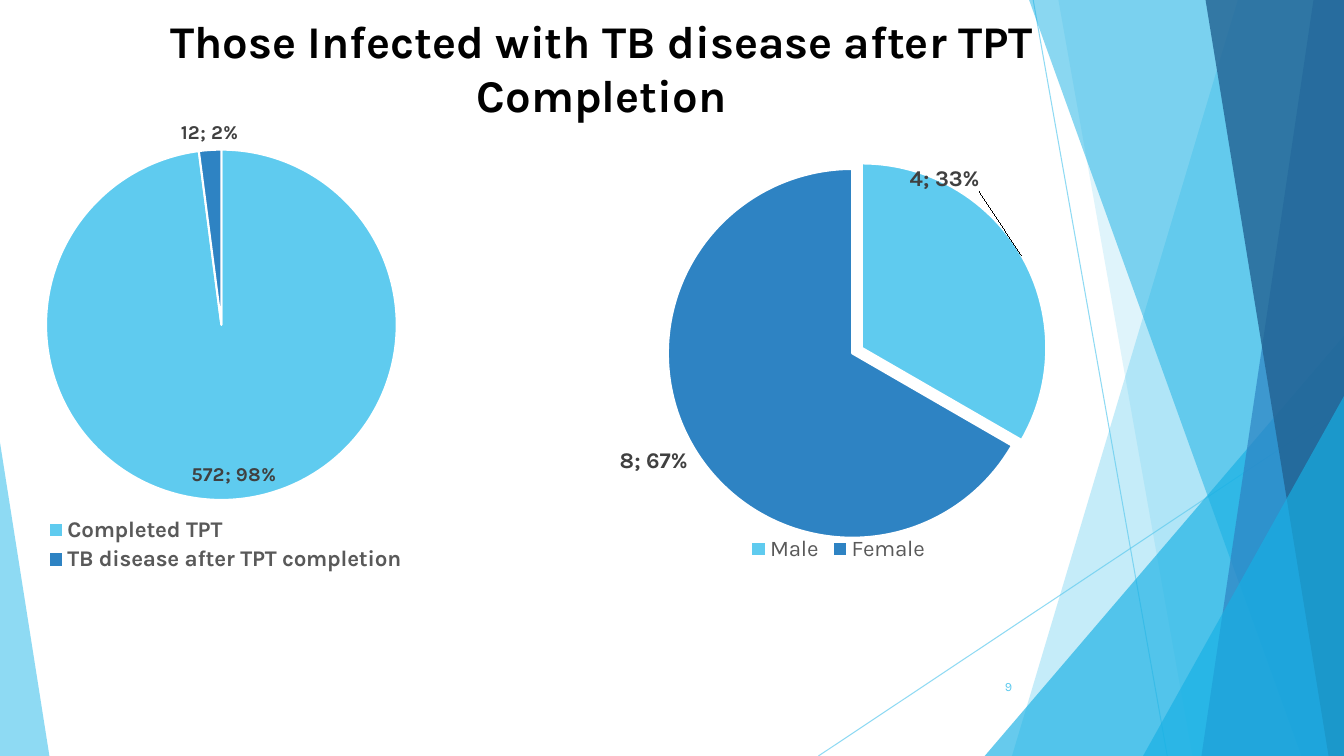
from lxml import etree
from pptx import Presentation
from pptx.chart.data import CategoryChartData
from pptx.dml.color import RGBColor
from pptx.enum.chart import XL_CHART_TYPE, XL_LABEL_POSITION, XL_LEGEND_POSITION
from pptx.enum.shapes import MSO_CONNECTOR, MSO_SHAPE
from pptx.enum.text import MSO_ANCHOR, PP_ALIGN
from pptx.oxml.ns import qn
from pptx.util import Pt

WIDE, HIGH = 960, 540
FONT = "Karla"
HUES = {
    "sky": "5FCBEF", "cyan": "17B0E4", "blue": "2E83C3", "navy": "226292",
    "white": "FFFFFF", "black": "000000", "dark": "404040", "grey": "595959",
}


def hue(name):
    """Return the named colour."""
    return RGBColor.from_string(HUES[name])


def fade(fill, alpha):
    """Set the opacity of a solid fill element in percent."""
    tone = fill.find(qn("a:srgbClr"))
    etree.SubElement(tone, qn("a:alpha")).set("val", str(alpha * 1000))


def paint(shape, name, alpha):
    """Give a shape a translucent fill and no line."""
    shape.shadow.inherit = False
    shape.line.fill.background()
    shape.fill.solid()
    shape.fill.fore_color.rgb = hue(name)
    fade(shape.element.spPr.find(qn("a:solidFill")), alpha)


def style(font, size, name, bold=False):
    """Set the face, size, colour and weight of a font."""
    font.name, font.size, font.bold = FONT, Pt(size), bold
    font.color.rgb = hue(name)


def ray(slide, ends):
    """Draw a thin translucent line."""
    line = slide.shapes.add_connector(MSO_CONNECTOR.STRAIGHT, *map(Pt, ends))
    line.line.color.rgb = hue("sky")
    line.line.width = Pt(0.75)
    props = line.element.spPr
    fade(props.find(qn("a:ln")).find(qn("a:solidFill")), 70)
    etree.SubElement(props, qn("a:effectLst"))


def fin(slide, top, foot, name, alpha):
    """Draw a full-height panel with a slanted left edge."""
    pen = slide.shapes.build_freeform(Pt(top), 0)
    edge = [(WIDE, 0), (WIDE, HIGH), (foot, HIGH)]
    pen.add_line_segments([(Pt(x), Pt(y)) for x, y in edge])
    paint(pen.convert_to_shape(), name, alpha)


def wedge(slide, left, top, width, apex, name, alpha):
    """Draw a right triangle that stands on the slide's foot."""
    box = map(Pt, (left, top, width, HIGH - top))
    shape = slide.shapes.add_shape(MSO_SHAPE.ISOSCELES_TRIANGLE, *box)
    shape.adjustments[0] = apex
    paint(shape, name, alpha)


def decor(slide):
    """Draw the layered facets at the sides."""
    ray(slide, (738, 0, 833.8, HIGH))
    ray(slide, (WIDE, 290.2, 584.6, HIGH))
    fin(slide, 884.2, 722.9, "sky", 36)
    fin(slide, 756, 851.8, "sky", 20)
    wedge(slide, 703.4, 239.8, 256.6, 1, "cyan", 66)
    fin(slide, 735.1, 929.5, "cyan", 50)
    fin(slide, 938.2, 858.2, "blue", 70)
    fin(slide, 861.1, 949, "navy", 80)
    wedge(slide, 816.5, 283, 143.5, 1, "cyan", 66)
    wedge(slide, 0, 316.1, 35.3, 0, "sky", 70)


def layout(sizes, inner=False):
    """Build a manual chart layout from fractions keyed by x, y, w and h."""
    root = etree.Element(qn("c:layout"))
    manual = etree.SubElement(root, qn("c:manualLayout"))
    if inner:
        etree.SubElement(manual, qn("c:layoutTarget")).set("val", "inner")
    if "w" in sizes or inner is None:
        for key in "xy":
            etree.SubElement(manual, qn(f"c:{key}Mode")).set("val", "edge")
    for key, size in sizes.items():
        etree.SubElement(manual, qn(f"c:{key}")).set("val", str(size))
    return root


def place(node, sizes, inner=False):
    """Put a manual layout into a chart node in place of any other."""
    old = node.find(qn("c:layout"))
    if old is not None:
        node.remove(old)
    first = node.find(qn("c:legendPos"))
    if first is None:
        first = node.find(qn("c:idx"))
    if first is None:
        node.insert(0, layout(sizes, inner))
    else:
        first.addnext(layout(sizes, inner))


def pie(slide, box, data, plot, size, spot, bold=False, key=None, burst=0, moves=()):
    """Add a pie with value and percent labels and a legend below."""
    feed = CategoryChartData()
    feed.categories = list(data)
    feed.add_series("Series 1", data.values())
    frame = slide.shapes.add_chart(XL_CHART_TYPE.PIE, *map(Pt, box), feed)
    chart = frame.chart
    style(chart.font, 10, "black")
    chart.has_title = False
    chart.has_legend = True
    chart.legend.position = XL_LEGEND_POSITION.BOTTOM
    chart.legend.include_in_layout = False
    style(chart.legend.font, 16, "grey", bold)
    area = chart.element.find(qn("c:chart")).find(qn("c:plotArea"))
    place(area, dict(zip("xywh", plot)), True)
    if key:
        place(chart.legend._element, dict(zip("xy", key)), None)

    disc = chart.plots[0]
    disc.vary_by_categories = True
    series = disc.series[0]
    for at, name in enumerate(("sky", "blue")):
        look = series.points[at].format
        look.fill.solid()
        look.fill.fore_color.rgb = hue(name)
        look.line.color.rgb = hue("white")
        look.line.width = Pt(1.5)
    for slot in series._element.iter(qn("c:dPt")):
        blast = etree.Element(qn("c:explosion"))
        blast.set("val", str(burst))
        slot.find(qn("c:spPr")).addprevious(blast)

    tags = series.data_labels
    tags.show_value = tags.show_percentage = True
    tags.position = spot
    style(tags.font, size, "dark", True)
    for at, move in enumerate(moves):
        tag = series.points[at].data_label
        style(tag.font, size, "dark", True)
        tag.position = spot
    for node, move in zip(series._element.iter(qn("c:dLbl")), moves):
        place(node, dict(zip("xy", move)))
        node.find(qn("c:showPercent")).set("val", "1")
    for shown in list(series._element.iter(qn("c:showPercent"))):
        gap = etree.Element(qn("c:separator"))
        gap.text = "; "
        last = shown.getparent().find(qn("c:showBubbleSize"))
        (shown if last is None else last).addnext(gap)


def label(slide, box, text, size, name, align, anchor, bold=False):
    """Add a wrapped text box."""
    frame = slide.shapes.add_textbox(*map(Pt, box)).text_frame
    frame.word_wrap = True
    frame.vertical_anchor = anchor
    frame.text = text
    para = frame.paragraphs[0]
    para.alignment = align
    style(para.runs[0].font, size, name, bold)


def main():
    """Build and save the slide."""
    deck = Presentation()
    deck.slide_width, deck.slide_height = Pt(WIDE), Pt(HIGH)
    slide = deck.slides.add_slide(deck.slide_layouts[6])
    decor(slide)
    pie(slide, (0, 86.4, 321.8, 325.4),
        {"Completed TPT": 572, "TB disease after TPT completion": 12},
        (0.014, 0.062, 0.955, 0.77), 14, XL_LABEL_POSITION.BEST_FIT, bold=True)
    label(slide, (676.1, 475.9, 54, 28.8), "9", 9, "sky",
          PP_ALIGN.RIGHT, MSO_ANCHOR.MIDDLE)
    pie(slide, (389.5, 88.6, 418.3, 334.8), {"Male": 4, "Female": 8},
        (0.089, 0.09, 0.887, 0.787), 16, XL_LABEL_POSITION.OUTSIDE_END,
        key=(0.34, 0.87), burst=3, moves=[(-0.2, -0.13)])
    label(slide, (53.3, 5.8, 753.1, 90), "Those Infected with TB disease after TPT Completion",
          32.4, "black", PP_ALIGN.CENTER, MSO_ANCHOR.TOP, bold=True)
    deck.save("out.pptx")


if __name__ == "__main__":
    main()
